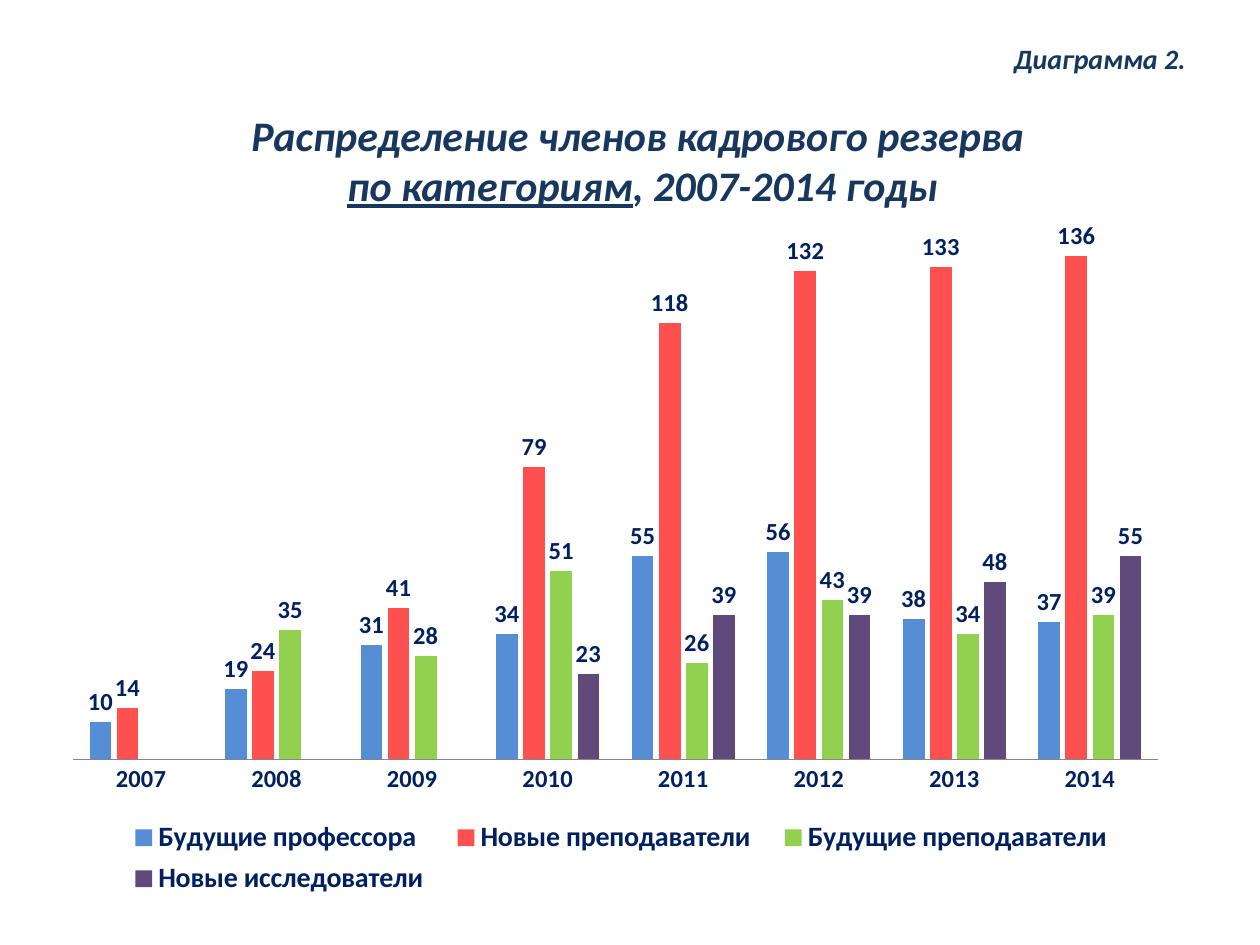
import pptx
import pptx.chart.data
import pptx.dml.color
import pptx.enum.chart
import pptx.enum.text
import pptx.oxml
import pptx.oxml.ns
import pptx.util

Pt = pptx.util.Pt
FONT = "Calibri"
COLORS = {"title": "17375E", "label": "002060", "axis": "868686"}
YEARS = [str(year) for year in range(2007, 2015)]
SERIES = [
    ("Будущие профессора", "558ED5", [10, 19, 31, 34, 55, 56, 38, 37]),
    ("Новые преподаватели", "FF5050", [14, 24, 41, 79, 118, 132, 133, 136]),
    ("Будущие преподаватели", "92D050", [None, 35, 28, 51, 26, 43, 34, 39]),
    ("Новые исследователи", "604A7B", [None, None, None, 23, 39, 39, 48, 55]),
]


def rgb(value):
    return pptx.dml.color.RGBColor.from_string(value)


def style_font(font, size, color):
    font.name = FONT
    font.size = Pt(size)
    font.bold = True
    font.color.rgb = rgb(color)


def add_run(p, text, size, underline=False):
    r = p.add_run()
    r.text = text
    style_font(r.font, size, COLORS["title"])
    r.font.italic = True
    r.font.underline = underline


def add_heading(s):
    sp = s.shapes.add_textbox(Pt(49.7), Pt(20.2), Pt(635), Pt(104.4))
    tf = sp.text_frame
    tf.word_wrap = True
    align = pptx.enum.text.PP_ALIGN
    p = tf.paragraphs[0]
    p.alignment = align.RIGHT
    p.space_after = Pt(19.5)
    add_run(p, "Диаграмма 2.", 16)
    p = tf.add_paragraph()
    p.alignment = align.CENTER
    add_run(p, "Распределение членов кадрового резерва ", 24)
    p = tf.add_paragraph()
    p.alignment = align.CENTER
    add_run(p, "по категориям", 24, underline=True)
    add_run(p, ", 2007-2014 годы", 24)


def set_layout(parent, index, x, y, w, h, inner=False):
    qn = pptx.oxml.ns.qn
    for old in parent.findall(qn("c:layout")):
        parent.remove(old)
    target = '<c:layoutTarget val="inner"/>' if inner else ""
    values = {"xMode": "edge", "yMode": "edge", "x": x, "y": y, "w": w, "h": h}
    items = "".join(f'<c:{key} val="{val}"/>' for key, val in values.items())
    parent.insert(index, pptx.oxml.parse_xml(
        f'<c:layout {pptx.oxml.ns.nsdecls("c")}>'
        f"<c:manualLayout>{target}{items}</c:manualLayout></c:layout>"))


def add_column_chart(s):
    enum = pptx.enum.chart
    data = pptx.chart.data.CategoryChartData()
    data.categories = YEARS
    for name, _, values in SERIES:
        data.add_series(name, values)
    chart = s.shapes.add_chart(
        enum.XL_CHART_TYPE.COLUMN_CLUSTERED,
        Pt(31), Pt(65.5), Pt(641.5), Pt(459.4), data).chart
    chart.has_title = False
    style_font(chart.font, 12, "000000")

    plot = chart.plots[0]
    plot.gap_width = 150
    plot.overlap = -25
    plot.vary_by_categories = False
    for series, (_, color, _) in zip(plot.series, SERIES):
        series.format.fill.solid()
        series.format.fill.fore_color.rgb = rgb(color)
        series.invert_if_negative = False
        labels = series.data_labels
        labels.show_value = True
        labels.position = enum.XL_LABEL_POSITION.OUTSIDE_END
        style_font(labels.font, 14, COLORS["label"])

    axis = chart.category_axis
    axis.major_tick_mark = enum.XL_TICK_MARK.NONE
    axis.format.line.color.rgb = rgb(COLORS["axis"])
    axis.format.line.width = Pt(0.75)
    style_font(axis.tick_labels.font, 14, COLORS["label"])
    axis = chart.value_axis
    axis.minimum_scale = 0
    axis.maximum_scale = 160
    axis.has_major_gridlines = False
    axis.visible = False

    chart.has_legend = True
    legend = chart.legend
    legend.position = enum.XL_LEGEND_POSITION.BOTTOM
    legend.include_in_layout = False
    style_font(legend.font, 16, COLORS["label"])
    set_layout(legend._element, 1, 0.05, 0.87, 0.91, 0.11)
    plot_area = chart._chartSpace.xpath("c:chart/c:plotArea")[0]
    set_layout(plot_area, 0, 0.017, 0.066, 0.966, 0.736, inner=True)


def main():
    prs = pptx.Presentation()
    prs.slide_width = Pt(720)
    prs.slide_height = Pt(540)
    s = prs.slides.add_slide(prs.slide_layouts[6])
    add_heading(s)
    add_column_chart(s)
    prs.save("out.pptx")


if __name__ == "__main__":
    main()
